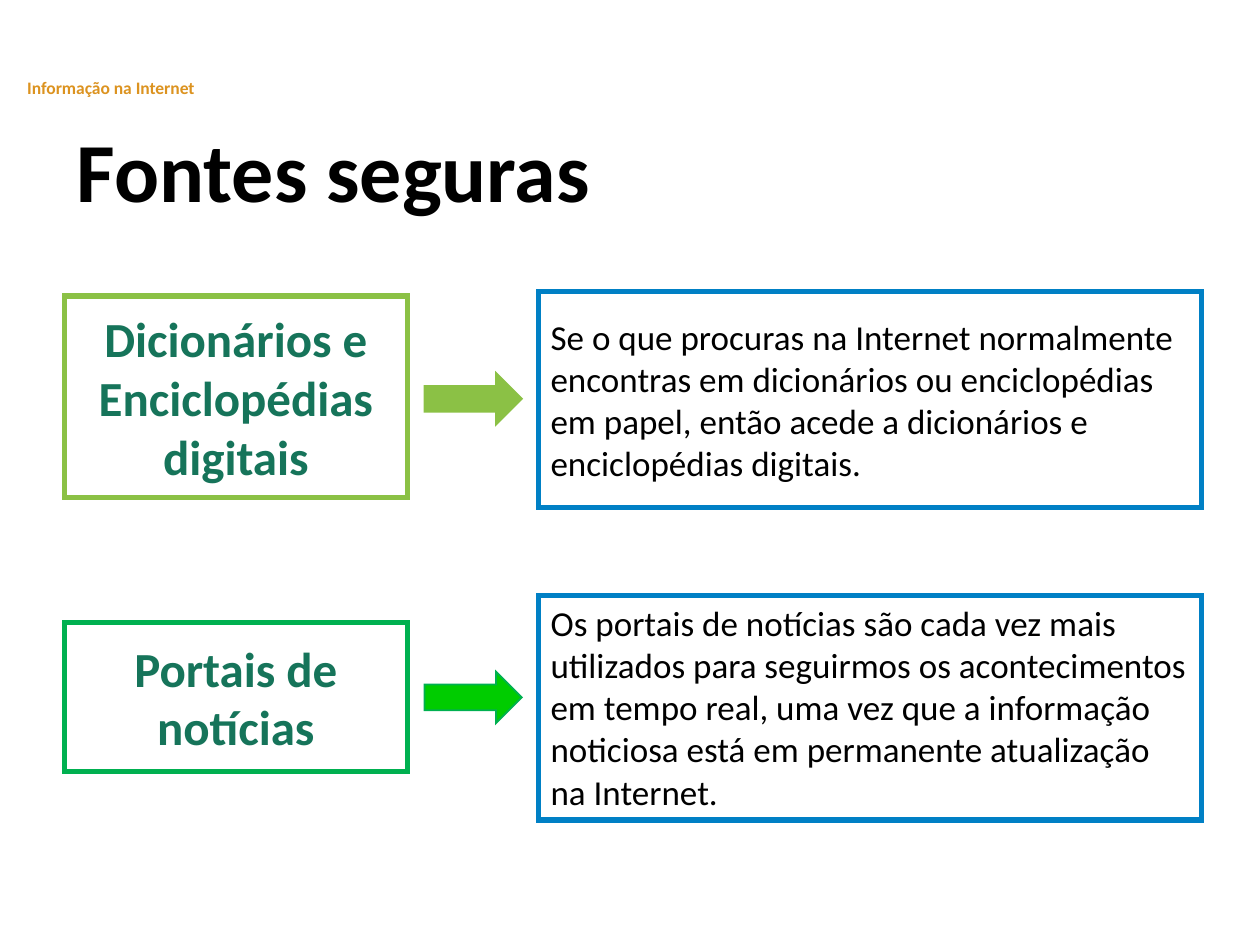
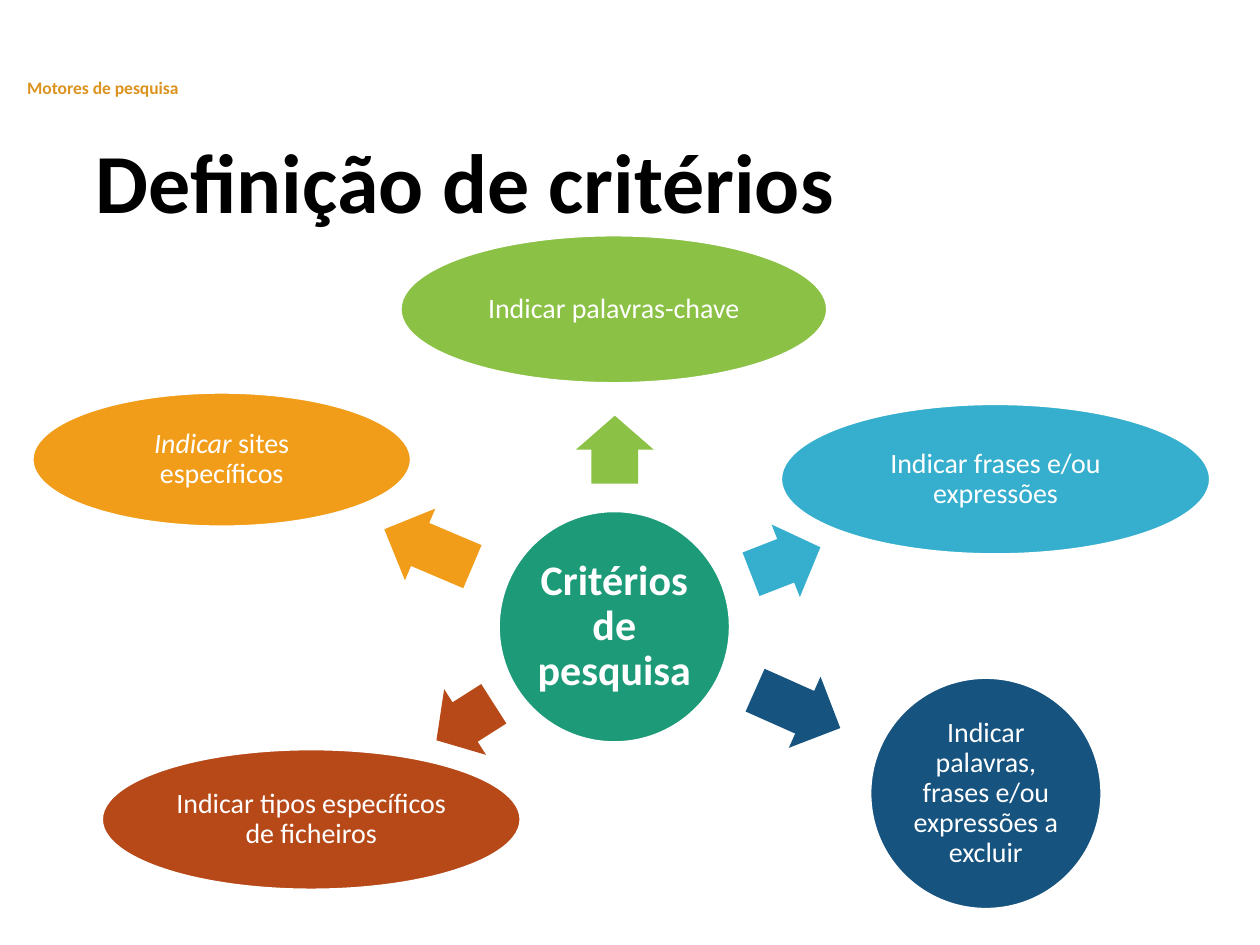
from lxml import etree
from pptx import Presentation
from pptx import util as u
from pptx.dml.color import RGBColor
from pptx.enum import shapes, text
from pptx.oxml import ns

WHITE = RGBColor(0xFF, 0xFF, 0xFF)
BLACK = RGBColor(0, 0, 0)
AMBER = RGBColor(0xDC, 0x93, 0x20)
LIME = RGBColor(0x8B, 0xC1, 0x45)
GREEN = RGBColor(0, 0xB0, 0x50)
BRIGHT_GREEN = RGBColor(0, 0xCC, 0)
DARK_GREEN = RGBColor(0x16, 0x74, 0x5A)
BLUE = RGBColor(0, 0x80, 0xC5)
TEAL = RGBColor(0x1D, 0x9A, 0x78)
SKY = RGBColor(0x36, 0xAF, 0xCE)
NAVY = RGBColor(0x16, 0x53, 0x7F)
RUST = RGBColor(0xB7, 0x49, 0x19)
ORANGE = RGBColor(0xF1, 0x9D, 0x19)

CENTER, LEFT = text.PP_ALIGN.CENTER, text.PP_ALIGN.LEFT
MIDDLE, TOP = text.MSO_ANCHOR.MIDDLE, text.MSO_ANCHOR.TOP


class Deck:
    """Holds the shared style and the slide being built; boxes are (left, top, width, height) in cm."""

    font = "Calibri"

    def __init__(self):
        self.prs = Presentation()
        self.prs.slide_width, self.prs.slide_height = u.Cm(25.4), u.Cm(19.05)
        self.s = None

    def slide(self, section, title, title_box, title_spacing):
        self.s = self.prs.slides.add_slide(self.prs.slide_layouts[6])
        self.textbox((0.3, 1.47, 10.2, 0.8), section, size=10, color=AMBER, spacing=0.9)
        self.textbox(title_box, title, size=48, color=BLACK, spacing=title_spacing)

    def fill_text(self, tf, paragraphs, size, color, bold=False, align=LEFT,
                  anchor=TOP, spacing=1.0, inset=None):
        """Each paragraph is a string, or a list of (words, italic) pairs."""
        frame = {"word_wrap": True, "vertical_anchor": anchor}
        if inset is not None:
            sides = ("left", "top", "right", "bottom")
            frame.update({f"margin_{side}": u.Cm(inset) for side in sides})
        for name, value in frame.items():
            setattr(tf, name, value)
        for i, content in enumerate(paragraphs):
            p = tf.paragraphs[0] if i == 0 else tf.add_paragraph()
            p.alignment, p.line_spacing = align, spacing
            runs = [(content, False)] if isinstance(content, str) else content
            for words, italic in runs:
                r = p.add_run()
                r.text = words
                style = {"name": self.font, "size": u.Pt(size), "bold": bold, "italic": italic}
                for name, value in style.items():
                    setattr(r.font, name, value)
                r.font.color.rgb = color

    def textbox(self, box, words, **style):
        sp = self.s.shapes.add_textbox(*map(u.Cm, box))
        self.fill_text(sp.text_frame, [words], bold=True, **style)

    def shape(self, kind, box, fill, line=None, width=1):
        sp = self.s.shapes.add_shape(kind, *map(u.Cm, box))
        sp.shadow.inherit = False
        sp.fill.solid()
        sp.fill.fore_color.rgb = fill
        if line is None:
            sp.line.fill.background()
        else:
            sp.line.color.rgb, sp.line.width = line, u.Pt(width)
            ln = sp.element.spPr.find(ns.qn("a:ln"))
            etree.SubElement(ln, ns.qn("a:miter"), lim="800000")
        return sp

    def panel(self, box, line, paragraphs, **style):
        sp = self.shape(shapes.MSO_SHAPE.RECTANGLE, box, WHITE, line, 3)
        self.fill_text(sp.text_frame, paragraphs, **style)

    def arrow(self, box, fill, line=None, angle=0, shaft=0.5):
        sp = self.shape(shapes.MSO_SHAPE.RIGHT_ARROW, box, fill, line)
        sp.adjustments[0] = shaft
        sp.rotation = angle

    def bubble(self, box, fill, content, size=16, bold=False):
        sp = self.shape(shapes.MSO_SHAPE.OVAL, box, fill, WHITE)
        self.fill_text(sp.text_frame, [content], size=size, color=WHITE, bold=bold,
                       align=CENTER, anchor=MIDDLE, spacing=0.9, inset=0.05)


def safe_sources(deck):
    deck.slide("Informação na Internet", "Fontes seguras", (1.3, 2.49, 13.7, 2.1), 0.9)
    # topic, (top, height), outline, arrow top, arrow fill, detail, (top, height), anchor
    rows = [
        (["Dicionários e Enciclopédias digitais"], (5.97, 4.06), LIME, 7.52, LIME,
         "Se o que procuras na Internet normalmente encontras em dicionários ou "
         "enciclopédias em papel, então acede a dicionários e enciclopédias digitais.",
         (5.87, 4.37), MIDDLE),
        (["Portais de", "notícias"], (12.55, 3), GREEN, 13.54, BRIGHT_GREEN,
         "Os portais de notícias são cada vez mais utilizados para seguirmos os "
         "acontecimentos em tempo real, uma vez que a informação noticiosa está em "
         "permanente atualização na Internet.",
         (12.01, 4.52), TOP),
    ]
    for topic, (top, height), line, arrow_top, fill, detail, (d_top, d_height), anchor in rows:
        deck.panel((1.3, top, 6.91, height), line, topic, size=28, color=DARK_GREEN,
                   bold=True, align=CENTER, anchor=MIDDLE)
        deck.arrow((8.56, arrow_top, 1.96, 1.04), fill, line)
        deck.panel((10.85, d_top, 13.38, d_height), BLUE, [detail], size=20,
                   color=BLACK, anchor=anchor)


def search_criteria(deck):
    deck.slide("Motores de pesquisa", "Definição de critérios", (1.68, 2.49, 16.9, 2.3), 1.0)
    deck.bubble((10.06, 10.31, 4.65, 4.65), TEAL, "Critérios de pesquisa", 24, True)
    # colour, arrow (left, top, length), angle, bubble box, content
    criteria = [
        (LIME, (11.71, 8.28, 1.37), 270, (8.08, 4.75, 8.59, 2.97), "Indicar palavras-chave"),
        (SKY, (15.09, 10.52, 1.5), 338.7, (15.75, 8.15, 8.64, 3.02),
         "Indicar frases e/ou expressões"),
        (NAVY, (15.14, 13.51, 1.88), 24, (17.55, 13.67, 4.65, 4.65),
         "Indicar palavras, frases e/ou expressões a excluir"),
        (RUST, (8.69, 13.77, 1.37), 147.5, (2.06, 15.11, 8.43, 2.82),
         "Indicar tipos específicos de ficheiros"),
        (ORANGE, (7.67, 10.26, 1.93), 203, (0.66, 7.92, 7.62, 2.69),
         [("Indicar ", True), ("sites específicos", False)]),
    ]
    for color, arrow, angle, box, content in criteria:
        deck.arrow((*arrow, 1.57), color, angle=angle, shaft=0.6)
        deck.bubble(box, color, content)


def main():
    deck = Deck()
    safe_sources(deck)
    search_criteria(deck)
    deck.prs.save("out.pptx")


if __name__ == "__main__":
    main()
